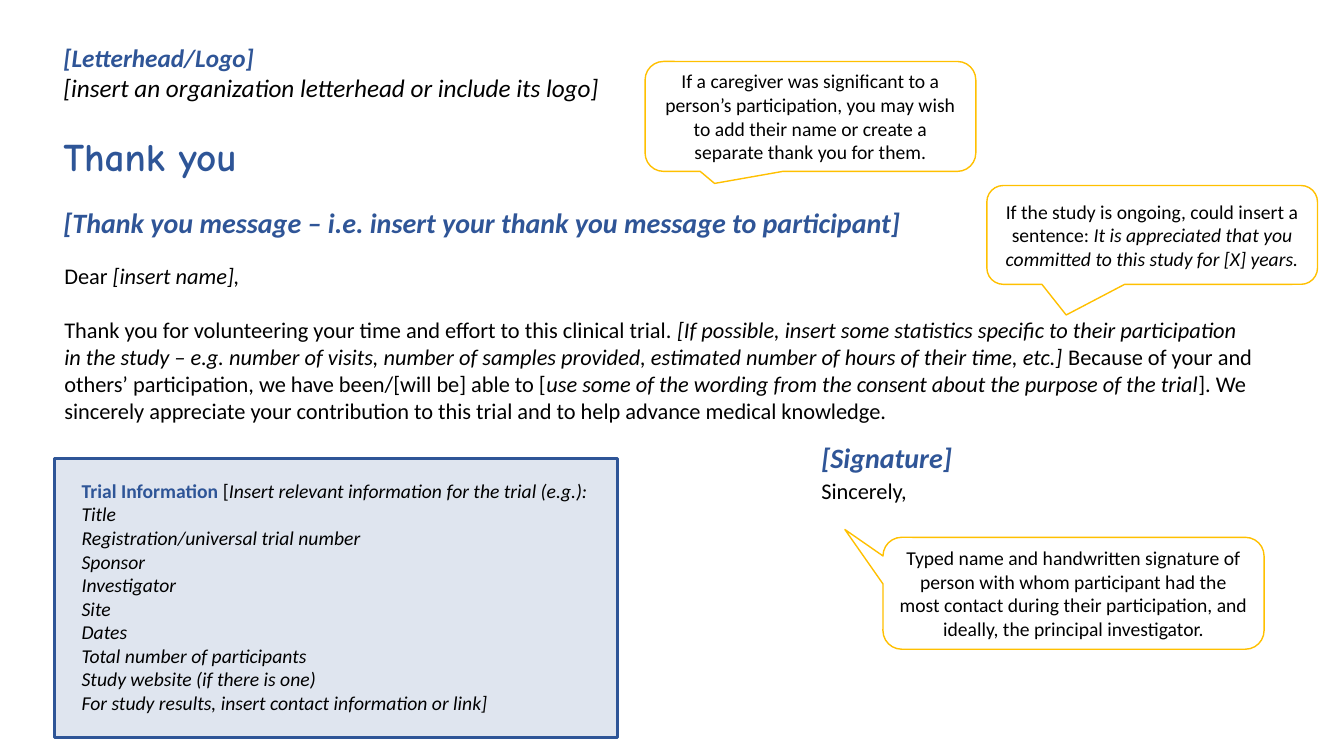
from dataclasses import dataclass

from lxml.etree import SubElement
from pptx import Presentation
from pptx.dml.color import RGBColor
from pptx.enum.shapes import MSO_SHAPE
from pptx.enum.text import MSO_ANCHOR, MSO_AUTO_SIZE, PP_ALIGN
from pptx.oxml.ns import qn
from pptx.util import Pt


@dataclass(frozen=True)
class Theme:
    navy: str = "2E5597"
    blue: str = "2F5597"
    gold: str = "FFC000"
    white: str = "FFFFFF"
    black: str = "000000"
    body_font: str = "Calibri"
    title_font: str = "Comic Neue"
    title: int = 28
    heading: int = 20
    letterhead: int = 18
    text: int = 16
    note: int = 14


class Letter:
    def __init__(self, s, theme):
        self.s, self.theme = s, theme

    def place(self, sp, box):
        sp.left, sp.top, sp.width, sp.height = (Pt(v) for v in box)

    def set_text(self, tf, paragraphs, size, font=None, align=PP_ALIGN.LEFT, gap=0):
        """Each paragraph is a list of (text, style, colour); style holds "b" and/or "i"."""
        tf.word_wrap = True
        tf.auto_size = MSO_AUTO_SIZE.NONE
        for n, runs in enumerate(paragraphs):
            p = tf.add_paragraph() if n else tf.paragraphs[0]
            p.alignment = align
            p.space_before = Pt(gap if n else 0)
            for text, style, colour in runs:
                r = p.add_run()
                r.text = text
                r.font.name = font or self.theme.body_font
                r.font.size = Pt(size)
                r.font.bold, r.font.italic = "b" in style, "i" in style
                r.font.color.rgb = RGBColor.from_string(colour)

    def title(self, box, text):
        sp = self.s.shapes.title
        self.place(sp, box)
        sp.text_frame.vertical_anchor = MSO_ANCHOR.TOP
        self.set_text(sp.text_frame, [[(text, "b", self.theme.navy)]],
                      self.theme.title, self.theme.title_font)

    def plain_list(self, box, paragraphs):
        """Body placeholder without bullets or indents."""
        sp = self.s.placeholders[1]
        self.place(sp, box)
        self.set_text(sp.text_frame, paragraphs, self.theme.note)
        for p in sp.text_frame.paragraphs:
            pPr = p._p.get_or_add_pPr()
            pPr.set("marL", "0")
            pPr.set("indent", "0")
            SubElement(pPr, qn("a:buNone"))

    def text(self, box, paragraphs, size, gap=0, wrap=True):
        tf = self.s.shapes.add_textbox(*(Pt(v) for v in box)).text_frame
        self.set_text(tf, paragraphs, size, gap=gap)
        tf.word_wrap = wrap

    def shape(self, kind, box, fill, line, width):
        sp = self.s.shapes.add_shape(kind, *(Pt(v) for v in box))
        sp.shadow.inherit = False
        sp.fill.solid()
        sp.fill.fore_color.rgb = RGBColor.from_string(fill)
        sp.line.color.rgb = RGBColor.from_string(line)
        sp.line.width = Pt(width)
        return sp

    def panel(self, box, opacity):
        """Translucent framed rectangle behind the list."""
        sp = self.shape(MSO_SHAPE.RECTANGLE, box, self.theme.navy, self.theme.navy, 2.25)
        colour = sp.element.spPr.find(qn("a:solidFill"))[0]
        SubElement(colour, qn("a:alpha")).set("val", str(opacity * 1000))
        self.s.placeholders[1].element.addprevious(sp.element)

    def callout(self, box, tip, runs):
        sp = self.shape(MSO_SHAPE.ROUNDED_RECTANGULAR_CALLOUT, box,
                        self.theme.white, self.theme.gold, 1)
        sp.adjustments[0], sp.adjustments[1] = tip
        sp.text_frame.vertical_anchor = MSO_ANCHOR.MIDDLE
        self.set_text(sp.text_frame, [runs], self.theme.note, align=PP_ALIGN.CENTER)


def main():
    prs = Presentation()
    prs.slide_width, prs.slide_height = Pt(960), Pt(540)
    t = Theme()
    letter = Letter(prs.slides.add_slide(prs.slide_layouts[1]), t)

    letter.panel((38.9, 327.6, 402.5, 199.4), 15)
    details = ["Title", "Registration/universal trial number", "Sponsor", "Investigator",
               "Site", "Dates", "Total number of participants",
               "Study website (if there is one)",
               "For study results, insert contact information or link]"]
    letter.plain_list((51.1, 338.4, 377.3, 177.1), [
        [("Trial Information ", "b", t.navy), ("[", "", t.black),
         ("Insert relevant information for the trial (e.g.):", "i", t.black)],
        *([(detail, "i", t.black)] for detail in details)])

    letter.text((38.2, 143.3, 903.6, 31.7), [
        [("[Thank you message – i.e. insert your thank you message to participant]",
          "bi", t.blue)]], t.heading)
    letter.text((579.6, 311, 281.5, 31.7), [[("[Signature]", "bi", t.blue)]], t.heading)
    letter.text((38.2, 26.6, 403.9, 51.1), [
        [("[Letterhead/Logo]", "bi", t.blue)],
        [("[insert an organization letterhead or include its logo]", "i", t.black)]],
        t.letterhead)

    letter.callout((460.8, 43.9, 236.2, 78.5), (-0.29, 0.61), [
        ("If a caregiver was significant to a person’s participation, you may wish "
         "to add their name or create a separate thank you for them.", "", t.black)])
    letter.callout((704.9, 132.5, 236.2, 70.6), (-0.26, 0.81), [
        ("If the study is ongoing, could insert a sentence: ", "", t.black),
        ("It is appreciated that you committed to this study for [X] years.", "i", t.black)])
    letter.callout((630.7, 383.8, 272.2, 79.9), (-0.6, -0.57), [
        ("Typed name and handwritten signature of person with whom participant had the "
         "most contact during their participation, and ideally, the principal "
         "investigator.", "", t.black)])

    letter.title((38.2, 90.7, 199.4, 41), "Thank you")
    letter.text((38.9, 183.6, 864, 123.8), [
        [("Dear ", "", t.black), ("[insert name],", "i", t.black)],
        [("Thank you for volunteering your time and effort to this clinical trial.",
          "", t.black),
         (" [If possible, insert some statistics specific to their participation in the "
          "study – e.g. number of visits, number of samples provided, estimated number "
          "of hours of their time, etc.] ", "i", t.black),
         ("Because of your and others’ participation, we have been/[will be] able to [",
          "", t.black),
         ("use some of the wording from the consent about the purpose of the trial",
          "i", t.black),
         ("]. We sincerely appreciate your contribution to this trial and to help advance "
          "medical knowledge.", "", t.black)]], t.text, gap=19.5)
    letter.text((579.6, 337, 76.3, 26.6), [[("Sincerely,", "", t.black)]], t.text, wrap=False)

    prs.save("out.pptx")


if __name__ == "__main__":
    main()
